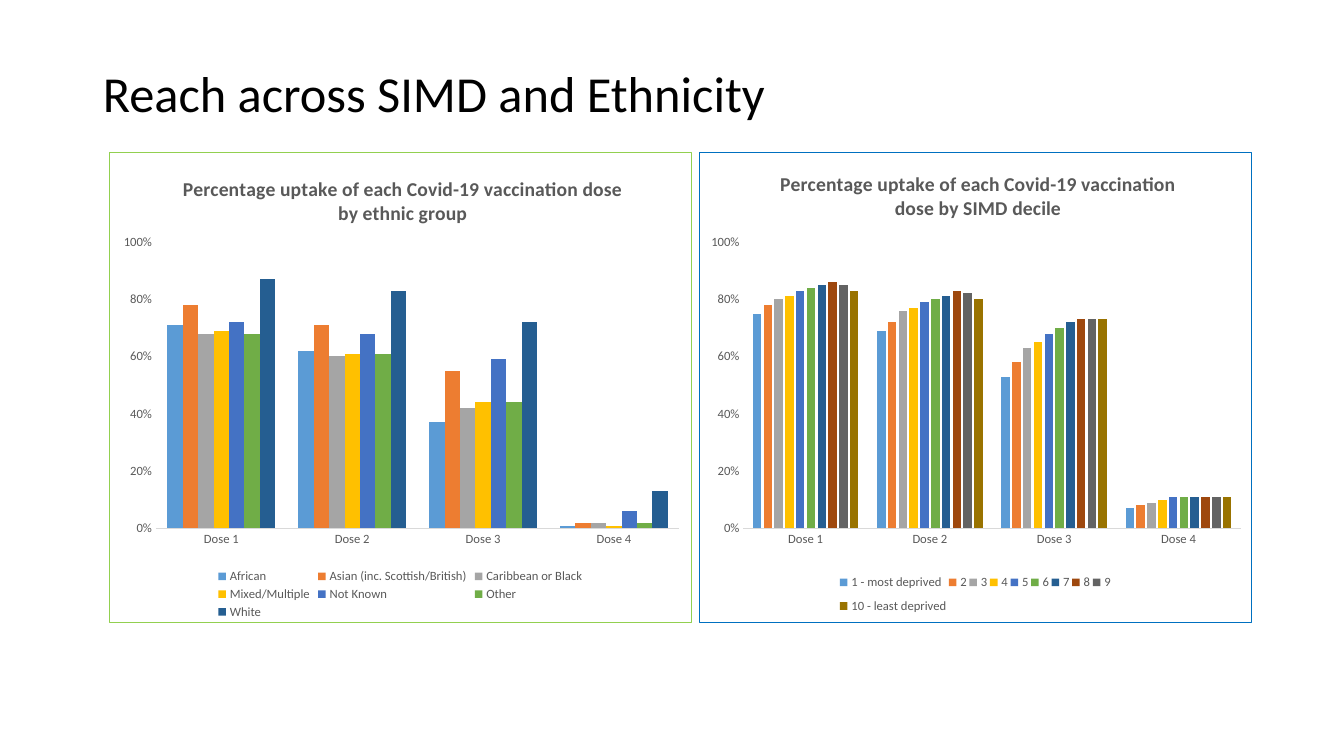
from lxml import etree
from pptx import Presentation
from pptx import util as u
from pptx.chart import data
from pptx.dml import color
from pptx.enum import chart as ec
from pptx.enum import text
from pptx.oxml import ns, parse_xml

FACE = "Calibri"
GREY = "595959"
HUES = ["5B9BD5", "ED7D31", "A5A5A5", "FFC000", "4472C4",
        "70AD47", "255E91", "9E480E", "636363", "997300"]
DOSES = ["Dose 1", "Dose 2", "Dose 3", "Dose 4"]
ETHNIC = [
    ("African", (0.71, 0.62, 0.37, 0.01)),
    ("Asian (inc. Scottish/British)", (0.78, 0.71, 0.55, 0.02)),
    ("Caribbean or Black", (0.68, 0.6, 0.42, 0.02)),
    ("Mixed/Multiple", (0.69, 0.61, 0.44, 0.01)),
    ("Not Known", (0.72, 0.68, 0.59, 0.06)),
    ("Other", (0.68, 0.61, 0.44, 0.02)),
    ("White", (0.87, 0.83, 0.72, 0.13)),
]
DECILE = [
    ("1 - most deprived", (0.75, 0.69, 0.53, 0.07)),
    ("2", (0.78, 0.72, 0.58, 0.08)),
    ("3", (0.8, 0.76, 0.63, 0.09)),
    ("4", (0.81, 0.77, 0.65, 0.1)),
    ("5", (0.83, 0.79, 0.68, 0.11)),
    ("6", (0.84, 0.8, 0.7, 0.11)),
    ("7", (0.85, 0.81, 0.72, 0.11)),
    ("8", (0.86, 0.83, 0.73, 0.11)),
    ("9", (0.85, 0.82, 0.73, 0.11)),
    ("10 - least deprived", (0.83, 0.8, 0.73, 0.11)),
]


def rgb(code):
    return color.RGBColor.from_string(code)


def style(font, size, hue, bold=False):
    font.name = FACE
    font.size = u.Pt(size)
    font.bold = bold
    font.color.rgb = rgb(hue)


def place(chart, route, index, spot, inner=False):
    node = chart.element.find(ns.qn("c:chart")).find(ns.qn(route))
    for old in node.findall(ns.qn("c:layout")):
        node.remove(old)
    layout = etree.Element(ns.qn("c:layout"))
    manual = etree.SubElement(layout, ns.qn("c:manualLayout"))
    rows = [("layoutTarget", "inner")] if inner else []
    rows += [("xMode", "edge"), ("yMode", "edge")]
    rows += zip("xywh", spot)
    for tag, val in rows:
        etree.SubElement(manual, ns.qn("c:" + tag)).set("val", str(val))
    node.insert(index, layout)


def frame(root, edge):
    corner = etree.Element(ns.qn("c:roundedCorners"))
    corner.set("val", "0")
    root.find(ns.qn("c:date1904")).addnext(corner)
    root.find(ns.qn("c:chart")).addnext(parse_xml(
        f'<c:spPr {ns.nsdecls("c", "a")}>'
        '<a:solidFill><a:srgbClr val="FFFFFF"/></a:solidFill>'
        f'<a:ln w="9525"><a:solidFill><a:srgbClr val="{edge}"/></a:solidFill></a:ln>'
        '</c:spPr>'))


def heading(slide, box, words):
    title = slide.shapes.title
    title.left, title.top, title.width, title.height = map(u.Inches, box)
    title.text_frame.text = words
    title.text_frame.vertical_anchor = text.MSO_ANCHOR.MIDDLE
    para = title.text_frame.paragraphs[0]
    para.alignment = text.PP_ALIGN.LEFT
    para.line_spacing = 0.9
    style(para.font, 36, "000000")


def axes(chart):
    cat, val = chart.category_axis, chart.value_axis
    for axis in (cat, val):
        axis.major_tick_mark = axis.minor_tick_mark = ec.XL_TICK_MARK.NONE
        axis.has_major_gridlines = False
        style(axis.tick_labels.font, 9, GREY)
    cat.format.line.color.rgb = rgb("D9D9D9")
    cat.format.line.width = u.Pt(0.75)
    val.format.line.fill.background()
    val.minimum_scale, val.maximum_scale, val.major_unit = 0, 1, 0.2
    val.tick_labels.number_format = "0%"
    val.tick_labels.number_format_is_linked = False


def uptake(slide, box, words, rows, edge, gap, lap, head, plot, key):
    source = data.CategoryChartData(number_format="0%")
    source.categories = DOSES
    for name, vals in rows:
        source.add_series(name, vals)
    chart = slide.shapes.add_chart(
        ec.XL_CHART_TYPE.COLUMN_CLUSTERED, *map(u.Inches, box), source).chart
    style(chart.font, 10, "000000")
    frame(chart.element, edge)

    chart.has_title = True
    chart.chart_title.text_frame.text = words
    style(chart.chart_title.text_frame.paragraphs[0].font, 14, GREY, True)
    place(chart, "c:title", 1, head)

    bars = chart.plots[0]
    bars.gap_width, bars.overlap, bars.vary_by_categories = gap, lap, False
    for series, hue in zip(bars.series, HUES):
        series.format.fill.solid()
        series.format.fill.fore_color.rgb = rgb(hue)
        series.invert_if_negative = False
    axes(chart)
    place(chart, "c:plotArea", 0, plot, True)

    chart.has_legend = True
    chart.legend.position = ec.XL_LEGEND_POSITION.BOTTOM
    chart.legend.include_in_layout = False
    style(chart.legend.font, 9, GREY)
    place(chart, "c:legend", 1, key)


def main():
    deck = Presentation()
    deck.slide_width, deck.slide_height = u.Inches(13.33), u.Inches(7.5)
    slide = deck.slides.add_slide(deck.slide_layouts[5])
    heading(slide, (0.92, 0.23, 11.5, 1.45), "Reach across SIMD and Ethnicity")
    lead = "Percentage uptake of each Covid-19 vaccination dose by "
    uptake(slide, (1.08, 1.51, 5.78, 4.67), lead + "ethnic group", ETHNIC,
           "92D050", 150, 0, (0.12, 0.04),
           (0.08, 0.19, 0.9, 0.61), (0.18, 0.88, 0.64, 0.12))
    uptake(slide, (6.93, 1.51, 5.49, 4.67), lead + "SIMD decile", DECILE,
           "0070C0", 219, -27, (0.14, 0.03),
           (0.08, 0.19, 0.9, 0.61), (0.25, 0.88, 0.5, 0.12))
    deck.save("out.pptx")


if __name__ == "__main__":
    main()
